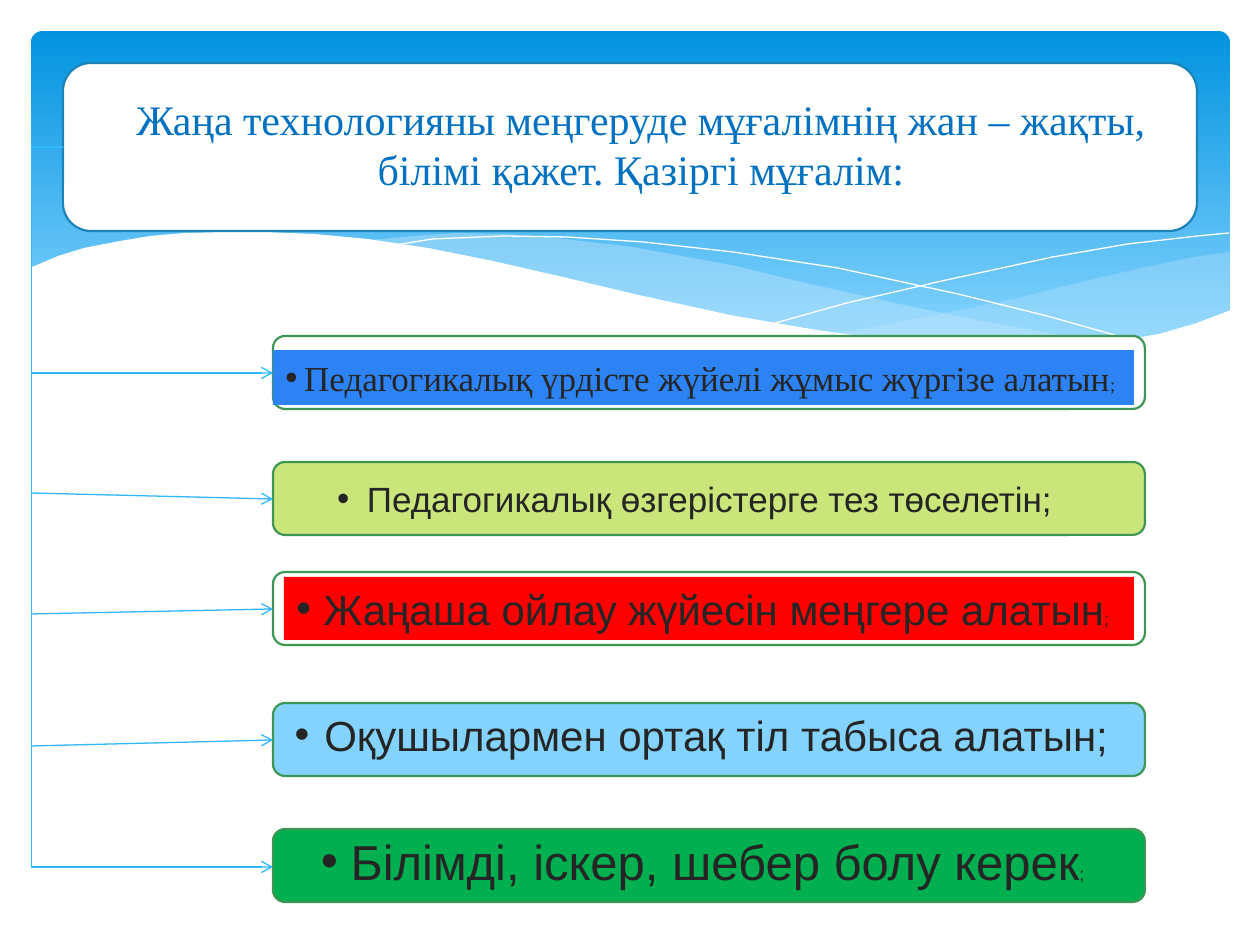
import lxml.etree
import pptx
import pptx.dml.color
import pptx.enum.shapes
import pptx.enum.text
import pptx.oxml.ns
import pptx.util

SCALE = 914400 / 126
SHAPES = pptx.enum.shapes.MSO_SHAPE
CONNECTORS = pptx.enum.shapes.MSO_CONNECTOR
qn = pptx.oxml.ns.qn


def emu(*lengths):
    return [round(length * SCALE) for length in lengths]


def color(hex_text):
    return pptx.dml.color.RGBColor.from_string(hex_text)


def add_xml(parent, tag, **values):
    return lxml.etree.SubElement(parent, qn(tag), values)


class SlideBuilder:
    dark, accent, border = "252525", "31B6FD", "3D9653"
    frame_format = {
        "word_wrap": True,
        "auto_size": pptx.enum.text.MSO_AUTO_SIZE.NONE,
        "vertical_anchor": pptx.enum.text.MSO_ANCHOR.MIDDLE,
    }

    def __init__(self, page):
        self.page = page

    def paint(self, shape, fill=None, line=None, width=1.25, alpha=None):
        shape.shadow.inherit = False
        if fill:
            shape.fill.solid()
            shape.fill.fore_color.rgb = color(fill)
            if alpha:
                tint = shape.fill._xPr.find(".//" + qn("a:srgbClr"))
                add_xml(tint, "a:alpha", val=str(alpha * 1000))
        else:
            shape.fill.background()
        if line:
            shape.line.color.rgb = color(line)
            shape.line.width = pptx.util.Pt(width)
        else:
            shape.line.fill.background()

    def box(self, area, kind=SHAPES.ROUNDED_RECTANGLE, **look):
        shape = self.page.shapes.add_shape(kind, *emu(*area))
        self.paint(shape, **look)
        return shape

    def gradient_panel(self, area, top, bottom):
        panel = self.box(area, fill=top)
        panel.adjustments[0] = 0.034
        panel.fill.gradient()
        panel.fill.gradient_angle = 270
        for stop, place, tone in zip(panel.fill.gradient_stops, (0, 0.9), (top, bottom)):
            stop.position = place
            stop.color.rgb = color(tone)

    def wave(self, points, closed=True, **look):
        builder = self.page.shapes.build_freeform(*points[0], scale=SCALE)
        builder.add_line_segments(points[1:], close=closed)
        self.paint(builder.convert_to_shape(), **look)

    def set_text(self, shape, runs, font, tone):
        frame = shape.text_frame
        for name, value in self.frame_format.items():
            setattr(frame, name, value)
        para = frame.paragraphs[0]
        para.alignment = pptx.enum.text.PP_ALIGN.CENTER
        for text, size in runs:
            span = para.add_run()
            span.text = text
            for name, value in {"name": font, "size": pptx.util.Pt(size)}.items():
                setattr(span.font, name, value)
            span.font.color.rgb = color(tone)
        return para

    def title(self, area, text, size, font, tone):
        title = self.page.shapes.title
        # Bring the title in front of the backdrop
        self.page.shapes._spTree.append(title._element)
        for name, value in zip(("left", "top", "width", "height"), emu(*area)):
            setattr(title, name, value)
        self.set_text(title, [(text, size)], font, tone)

    def item(self, area, runs, font, fill=None):
        if fill:
            shape = self.box(area, SHAPES.RECTANGLE, fill=fill)
        else:
            shape = self.page.shapes.add_textbox(*emu(*area))
        para = self.set_text(shape, runs, font, self.dark)
        properties = para._p.get_or_add_pPr()
        add_xml(properties, "a:buFont", typeface="Arial")
        add_xml(properties, "a:buChar", char="•")

    def arrow(self, start, end, bend=None):
        kind = CONNECTORS.STRAIGHT if bend is None else CONNECTORS.ELBOW
        arrow = self.page.shapes.add_connector(kind, *emu(*start, *end))
        arrow.line.color.rgb = color(self.accent)
        arrow.line.width = pptx.util.Pt(0.75)
        properties = arrow._element.spPr
        add_xml(properties.find(qn("a:ln")), "a:tailEnd", type="arrow")
        add_xml(properties, "a:effectLst")
        if bend is not None:
            geometry = properties.find(qn("a:prstGeom"))
            guides = geometry.find(qn("a:avLst"))
            if guides is None:
                guides = add_xml(geometry, "a:avLst")
            add_xml(guides, "a:gd", name="adj1", fmla=f"val {round(bend * 100000)}")


RIGHT_WAVE = [
    (1229, 252), (1194, 257), (1142, 268), (1085, 281), (1014, 299), (949, 312),
    (890, 324), (833, 334), (888, 341), (939, 347), (984, 349), (1026, 350),
    (1076, 348), (1120, 343), (1160, 334), (1196, 324), (1230, 311), (1230, 252)]
MIDDLE_WAVE = [
    (1125, 344), (1055, 334), (977, 320), (890, 302), (793, 280), (736, 266),
    (682, 256), (633, 247), (557, 238), (503, 234), (455, 233), (413, 236),
    (360, 241), (431, 251), (509, 266), (566, 280), (668, 302), (757, 321),
    (838, 335), (910, 345), (974, 349), (1031, 350), (1081, 349)]
FALLING_LINE = [
    (389, 246), (433, 239), (505, 236), (567, 237), (643, 242), (733, 252),
    (838, 268), (958, 294), (1047, 316), (1143, 343)]
RISING_LINE = [
    (772, 324), (847, 303), (942, 281), (1053, 257), (1128, 244), (1198, 236),
    (1229, 233)]
WHITE_WAVE = [
    (1231, 310), (1197, 323), (1159, 334), (1118, 341), (1071, 347), (1019, 349),
    (959, 347), (892, 340), (816, 330), (730, 315), (634, 294), (563, 277),
    (493, 261), (428, 248), (368, 239), (315, 234), (266, 232), (223, 232),
    (184, 233), (150, 236), (120, 241), (84, 248), (58, 256), (37, 265),
    (29, 268), (29, 415), (1231, 415)]

# Frame top, frame fill, text area, text fill, font, runs
ITEMS = [
    (336, "FFFFFF", (273, 350, 861, 55), "2D83F4", "Times New Roman",
     [("Педагогикалық үрдісте жүйелі жұмыс жүргізе алатын", 20), (";", 10.5)]),
    (462, "CAE67B", (273, 471, 861, 55), None, "Arial",
     [("Педагогикалық өзгерістерге тез төселетін;", 20)]),
    (572, "FFFFFF", (284, 577, 850, 63), "FF0000", "Arial",
     [("Жаңаша ойлау жүйесін меңгере алатын", 24), (";", 10)]),
    (703, "83D3FE", (273, 703, 872, 63), None, "Arial",
     [("Оқушылармен ортақ тіл табыса алатын;", 24)]),
    (829, "00B050", (284, 825, 850, 72), None, "Arial",
     [("Білімді, іскер, шебер болу керек", 28), (";", 10)]),
]


def main():
    deck = pptx.Presentation()
    deck.slide_width, deck.slide_height = emu(1260, 945)
    page = deck.slides.add_slide(deck.slide_layouts[5])
    slide = SlideBuilder(page)

    # Blue backdrop with waves
    slide.gradient_panel((31, 31, 1199, 340), "0293E0", "83D3FE")
    slide.wave(RIGHT_WAVE, fill="C6E7FC", alpha=29)
    slide.wave(MIDDLE_WAVE, fill="C6E7FC", alpha=40)
    for curve in (FALLING_LINE, RISING_LINE):
        slide.wave(curve, closed=False, line="FFFFFF", width=0)
    slide.wave(WHITE_WAVE, fill="FFFFFF")

    # Title
    slide.box((63, 63, 1134, 168), fill="FFFFFF", line="1C83B9")
    slide.title((116, 86, 1050, 115),
                "Жаңа технологияны меңгеруде мұғалімнің жан – жақты, "
                "білімі қажет. Қазіргі мұғалім:", 24, "Times New Roman", "0070C0")

    # Item frames
    for top, fill, *_ in ITEMS:
        slide.box((273, top, 872, 73), fill=fill, line=slide.border)

    # Arrows from the trunk on the left
    for end in (373, 867):
        slide.arrow((63, 147), (273, end), bend=-0.15)
    for start, end in ((746, 740), (614, 609), (493, 499)):
        slide.arrow((31, start), (273, end))

    # Item texts
    for _, _, area, fill, font, runs in ITEMS:
        slide.item(area, runs, font, fill)

    deck.save("out.pptx")


if __name__ == "__main__":
    main()
